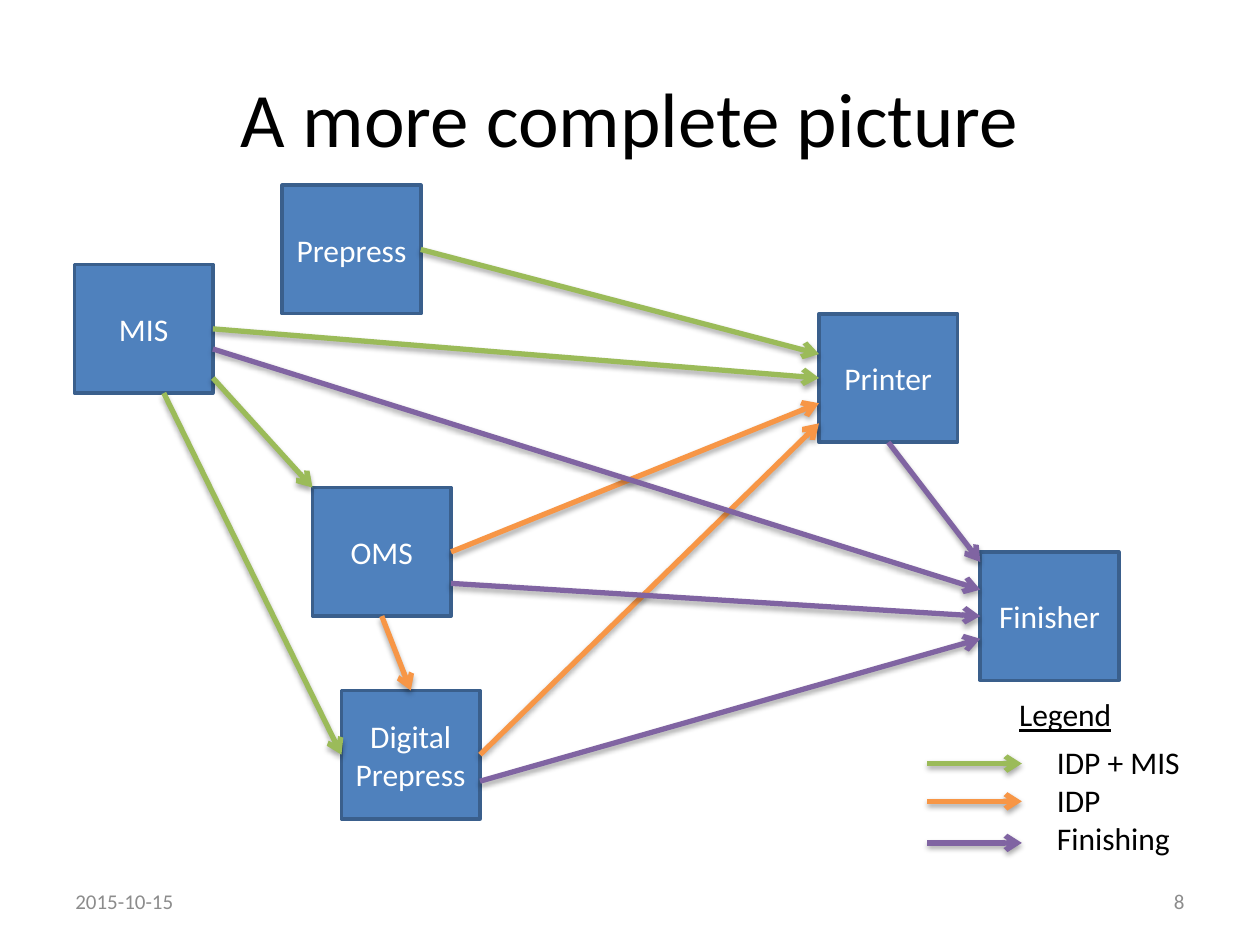
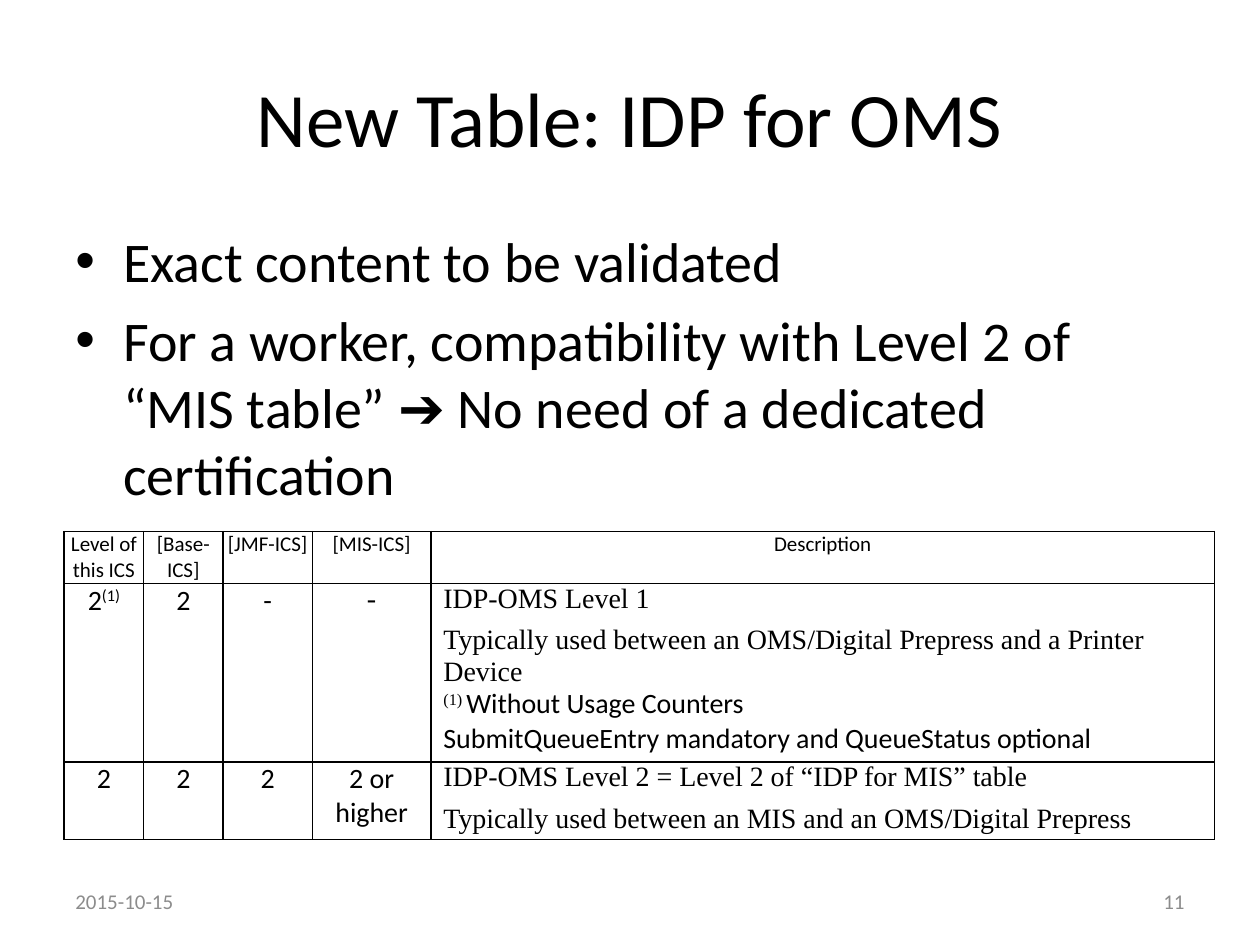
from copy import deepcopy

from lxml import etree
from pptx import Presentation
from pptx import util as u
from pptx.dml.color import RGBColor
from pptx.enum import shapes, text
from pptx.oxml import parse_xml
from pptx.oxml.ns import nsdecls, qn

PX = 9144  # 100 px to the inch

BLACK = RGBColor(0x00, 0x00, 0x00)
WHITE = RGBColor(0xFF, 0xFF, 0xFF)
GREY = RGBColor(0x8C, 0x8C, 0x8C)
BLUE = RGBColor(0x4F, 0x81, 0xBD)
DARK_BLUE = RGBColor(0x3A, 0x5F, 0x8C)
GREEN = RGBColor(0x9B, 0xBB, 0x59)
ORANGE = RGBColor(0xF7, 0x96, 0x46)
PURPLE = RGBColor(0x80, 0x64, 0xA2)

SANS, SERIF = "Calibri", "Times New Roman"
LEFT, CENTER, RIGHT = text.PP_ALIGN.LEFT, text.PP_ALIGN.CENTER, text.PP_ALIGN.RIGHT
TOP_ANCHOR, MIDDLE = text.MSO_ANCHOR.TOP, text.MSO_ANCHOR.MIDDLE

TITLE_BOX = (50, 30, 900, 125)
DATE_BOX = (50, 695, 233, 40)
NUMBER_BOX = (717, 695, 233, 40)
DATE = "2015-10-15"

TOP, LEFT_SIDE, BOTTOM, RIGHT_SIDE = range(4)
NODE_WIDTH, NODE_HEIGHT = 110, 102
NODES = {
    "Prepress": (165, 0),
    "MIS": (0, 63),
    "OMS": (189, 240),
    "Digital Prepress": (212, 401),
    "Printer": (591, 102),
    "Finisher": (719, 291),
}
# Each end is node, side and the distance along that side; None is its middle.
FLOWS = [
    (GREEN, ("MIS", RIGHT_SIDE, 90), ("OMS", LEFT_SIDE, 0)),
    (GREEN, ("MIS", BOTTOM, 71), ("Digital Prepress", LEFT_SIDE, None)),
    (ORANGE, ("OMS", BOTTOM, None), ("Digital Prepress", TOP, None)),
    (ORANGE, ("OMS", RIGHT_SIDE, None), ("Printer", LEFT_SIDE, 71)),
    (ORANGE, ("Digital Prepress", RIGHT_SIDE, None), ("Printer", LEFT_SIDE, 87)),
    (PURPLE, ("Digital Prepress", RIGHT_SIDE, 72), ("Finisher", LEFT_SIDE, 69)),
    (PURPLE, ("OMS", RIGHT_SIDE, 76), ("Finisher", LEFT_SIDE, None)),
    (PURPLE, ("Printer", BOTTOM, None), ("Finisher", LEFT_SIDE, 8)),
    (GREEN, ("MIS", RIGHT_SIDE, None), ("Printer", LEFT_SIDE, None)),
    (GREEN, ("Prepress", RIGHT_SIDE, None), ("Printer", LEFT_SIDE, 32)),
    (PURPLE, ("MIS", RIGHT_SIDE, 67), ("Finisher", LEFT_SIDE, 30)),
]
LEGEND_ARROWS = [(GREEN, 59), (ORANGE, 89), (PURPLE, 122)]

BULLETS = [
    "Exact content to be validated",
    "For a worker, compatibility with Level 2 of “MIS table” ➔ "
    "No need of a dedicated certification",
]

COLUMN_WIDTHS = (63, 63, 71, 94, 622)
ROW_HEIGHTS = (41, 136, 61)
SUPER = {"baseline": 30}
SERIF_SUPER = {"font": SERIF, "baseline": 30}
IN_SERIF = {"font": SERIF}
# A cell is a list of paragraphs; a paragraph is a string or a list of runs.
LEVELS = [
    [["Level of this ICS"], ["[Base-ICS]"], ["[JMF-ICS]"], ["[MIS-ICS]"], ["Description"]],
    [[[("2", {}), ("(1)", SUPER)]], ["2"], ["-"], [[("-", IN_SERIF)]], [
        [("IDP-OMS Level 1", IN_SERIF)],
        [("Typically used between an OMS/Digital Prepress and a Printer Device\n", IN_SERIF),
         ("(1) ", SERIF_SUPER),
         ("Without Usage Counters\nSubmitQueueEntry mandatory and QueueStatus optional", {})],
    ]],
    [["2"], ["2"], ["2"], ["2 or higher"], [
        [("IDP-OMS Level 2 = Level 2 of “IDP for MIS” table", IN_SERIF)],
        [("Typically used between an MIS and an OMS/Digital Prepress", IN_SERIF)],
    ]],
]


def px(*lengths):
    return [u.Emu(length * PX) for length in lengths]


def add_run(paragraph, words, size, color, font=SANS, baseline=0, underline=False):
    """Add words to the paragraph; each newline becomes a line break of the same format."""
    for number, line in enumerate(words.split("\n")):
        if number:
            paragraph.add_line_break()
            line_break = paragraph._p.findall(qn("a:br"))[-1]
            line_break.append(deepcopy(run._r.rPr))
        if number and not line:
            continue
        run = paragraph.add_run()
        run.text = line
        run.font.size, run.font.name = u.Pt(size), font
        run.font.color.rgb = color
        if underline:
            run.font.underline = True
        if baseline:
            run._r.get_or_add_rPr().set("baseline", str(baseline * 1000))


def write(frame, paragraphs, size=18, color=BLACK, align=LEFT, anchor=TOP_ANCHOR,
          before=0, after=0, wrap=True, underline=False):
    frame.word_wrap = wrap
    frame.vertical_anchor = anchor
    for number, content in enumerate(paragraphs):
        paragraph = frame.add_paragraph() if number else frame.paragraphs[0]
        paragraph.alignment = align
        paragraph.space_before, paragraph.space_after = u.Pt(before), u.Pt(after)
        runs = [(content, {})] if isinstance(content, str) else content
        for words, changes in runs:
            add_run(paragraph, words, size, color, underline=underline, **changes)


def add_text(slide, box, paragraphs, **style):
    frame = slide.shapes.add_textbox(*px(*box)).text_frame
    write(frame, paragraphs, **style)
    return frame


def add_frame(slide, title, number):
    """Add the title, date and slide number that every slide has."""
    add_text(slide, TITLE_BOX, [title], size=44, align=CENTER, anchor=MIDDLE)
    add_text(slide, DATE_BOX, [DATE], size=12, color=GREY, anchor=MIDDLE)
    add_text(slide, NUMBER_BOX, [str(number)], size=12, color=GREY, align=RIGHT, anchor=MIDDLE)


def add_arrow(slide, start, end, color):
    arrow = slide.shapes.add_connector(shapes.MSO_CONNECTOR.STRAIGHT, *px(*start, *end))
    arrow.line.color.rgb = color
    arrow.line.width = u.Pt(3)
    etree.SubElement(arrow.line._get_or_add_ln(), qn("a:tailEnd"), type="arrow")
    arrow._element.spPr.append(parse_xml(
        f'<a:effectLst {nsdecls("a")}>'
        '<a:outerShdw blurRad="40000" dist="23000" dir="5400000" rotWithShape="0">'
        '<a:srgbClr val="000000"><a:alpha val="35000"/></a:srgbClr>'
        '</a:outerShdw></a:effectLst>'))
    return arrow


def add_node(slide, left, top, label):
    node = slide.shapes.add_shape(
        shapes.MSO_SHAPE.RECTANGLE, *px(left, top, NODE_WIDTH, NODE_HEIGHT))
    node.shadow.inherit = False
    node.fill.solid()
    node.fill.fore_color.rgb = BLUE
    node.line.color.rgb = DARK_BLUE
    node.line.width = u.Pt(2)
    write(node.text_frame, [label], color=WHITE, align=CENTER, anchor=MIDDLE)
    return node


def side_point(corner, side, along):
    left, top = corner
    if side in (TOP, BOTTOM):
        along = NODE_WIDTH // 2 if along is None else along
        return left + along, top + (NODE_HEIGHT if side == BOTTOM else 0)
    along = NODE_HEIGHT // 2 if along is None else along
    return left + (NODE_WIDTH if side == RIGHT_SIDE else 0), top + along


def add_workflow(slide, left, top):
    corners = {label: (left + x, top + y) for label, (x, y) in NODES.items()}
    nodes = {label: add_node(slide, *corner, label) for label, corner in corners.items()}
    for color, source, target in FLOWS:
        start, end = (side_point(corners[label], side, along)
                      for label, side, along in (source, target))
        arrow = add_arrow(slide, start, end, color)
        for (label, side, along), connect in ((source, arrow.begin_connect),
                                              (target, arrow.end_connect)):
            if along is None:
                connect(nodes[label], side)


def add_legend(slide, left, top):
    for color, y in LEGEND_ARROWS:
        add_arrow(slide, (left, top + y), (left + 75, top + y), color)
    add_text(slide, (left + 93, top + 38, 119, 101), ["IDP + MIS\nIDP", "Finishing"], wrap=False)
    add_text(slide, (left + 63, top, 94, 40), ["Legend"], wrap=False, underline=True)


def add_bullets(slide, box):
    frame = add_text(slide, box, BULLETS, size=32, before=6.4)
    indent = 38 * PX
    for paragraph in frame.paragraphs:
        properties = paragraph._p.get_or_add_pPr()
        properties.set("marL", str(indent))
        properties.set("indent", str(-indent))
        etree.SubElement(properties, qn("a:buFont"), typeface="Arial")
        etree.SubElement(properties, qn("a:buChar"), char="•")


def add_borders(cell):
    properties = cell._tc.get_or_add_tcPr()
    for position, edge in enumerate(("lnL", "lnR", "lnT", "lnB")):
        properties.insert(position, parse_xml(
            f'<a:{edge} {nsdecls("a")} w="12700"><a:solidFill>'
            f'<a:srgbClr val="{BLACK}"/></a:solidFill></a:{edge}>'))


def add_level_table(slide, left, top):
    size = (sum(COLUMN_WIDTHS), sum(ROW_HEIGHTS))
    table = slide.shapes.add_table(
        len(ROW_HEIGHTS), len(COLUMN_WIDTHS), *px(left, top, *size)).table
    table.first_row = table.horz_banding = False
    for column, width in zip(table.columns, px(*COLUMN_WIDTHS)):
        column.width = width
    for row, height in zip(table.rows, px(*ROW_HEIGHTS)):
        row.height = height
    last = len(COLUMN_WIDTHS) - 1
    for r, level in enumerate(LEVELS):
        for c, paragraphs in enumerate(level):
            cell = table.cell(r, c)
            cell.fill.background()
            add_borders(cell)
            side = 10 if c == last else 3
            cell.margin_left, cell.margin_right = px(side, side)
            cell.margin_top = cell.margin_bottom = 0
            write(cell.text_frame, paragraphs, size=16 if r else 12,
                  align=LEFT if r and c == last else CENTER, before=3, after=3)


def main():
    deck = Presentation()
    deck.slide_width, deck.slide_height = px(1000, 750)
    blank = deck.slide_layouts[6]

    workflow = deck.slides.add_slide(blank)
    add_frame(workflow, "A more complete picture", 8)
    add_workflow(workflow, 59, 147)
    add_legend(workflow, 736, 547)

    levels = deck.slides.add_slide(blank)
    add_frame(levels, "New Table: IDP for OMS", 11)
    add_bullets(levels, (50, 175, 900, 495))
    add_level_table(levels, 51, 422)

    deck.save("out.pptx")


if __name__ == "__main__":
    main()
